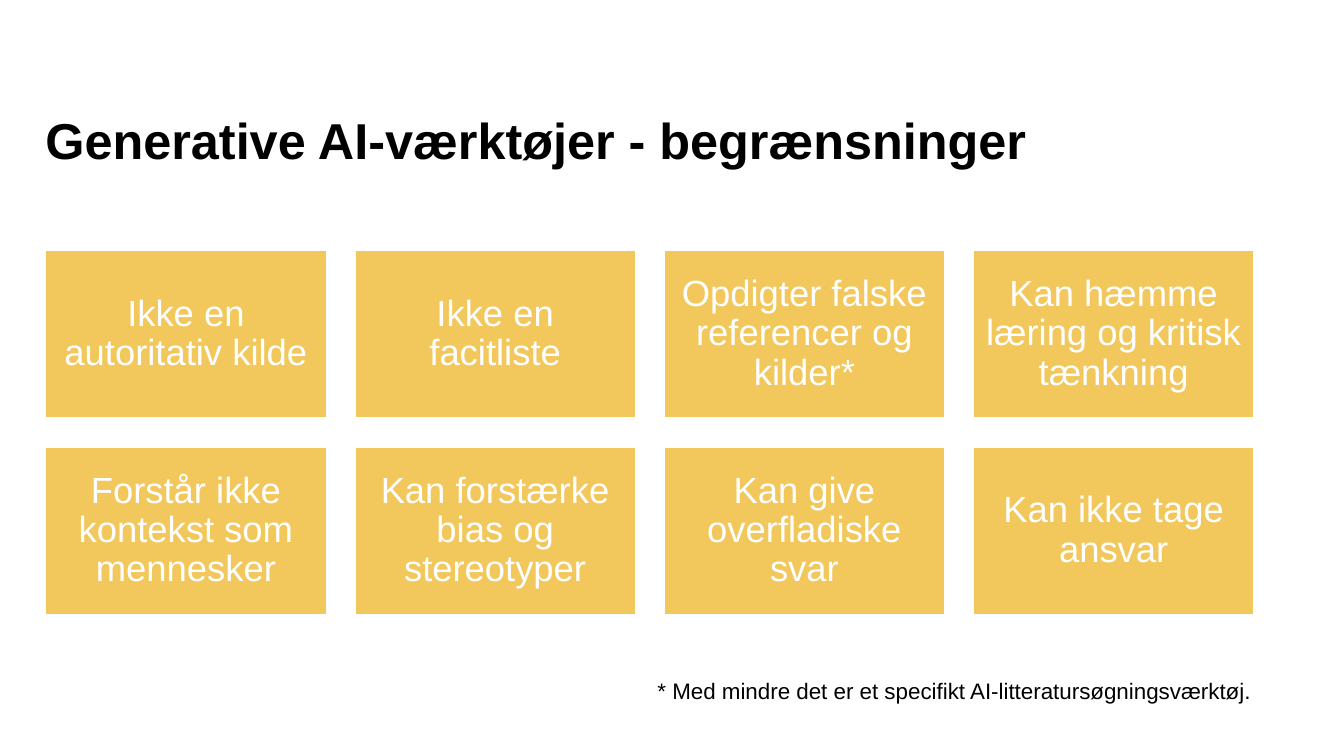
"""Build a slide on the limits of generative AI tools."""
import dataclasses

import pptx
import pptx.dml.color
import pptx.enum.shapes
import pptx.enum.text
import pptx.util

Inches = pptx.util.Inches
Align = pptx.enum.text.PP_ALIGN
Anchor = pptx.enum.text.MSO_ANCHOR


@dataclasses.dataclass(frozen=True)
class Theme:
    """Hold the colours, font and type sizes."""
    font: str = "Arial"
    ink: str = "000000"
    paper: str = "FFFFFF"
    gold: str = "F2C75C"
    head: int = 36
    body: int = 26
    note: int = 16


THEME = Theme()
LIMITS = [
    "Ikke en autoritativ kilde",
    "Ikke en facitliste",
    "Opdigter falske referencer og kilder*",
    "Kan hæmme læring og kritisk tænkning",
    "Forstår ikke kontekst som mennesker",
    "Kan forstærke bias og stereotyper",
    "Kan give overfladiske svar",
    "Kan ikke tage ansvar",
]
COLS = 4
LEFT, TOP = 0.45, 2.48
WIDE, HIGH = 2.79, 1.67
STEP_X, STEP_Y = 3.067, 1.95


def rgb(code):
    """Turn a hex code into a colour."""
    return pptx.dml.color.RGBColor.from_string(code)


def write(shape, text, size, color, bold=False, align=Align.LEFT,
          anchor=Anchor.TOP, inset=0, lines=1.0, wrap=True):
    """Set and format the one paragraph of a shape."""
    frame = shape.text_frame
    frame.text = text
    frame.word_wrap = wrap
    frame.auto_size = pptx.enum.text.MSO_AUTO_SIZE.NONE
    frame.vertical_anchor = anchor
    frame.margin_left = frame.margin_right = Inches(inset)
    frame.margin_top = frame.margin_bottom = Inches(inset)
    para = frame.paragraphs[0]
    para.alignment = align
    para.line_spacing = lines
    font = para.runs[0].font
    font.name = THEME.font
    font.size = pptx.util.Pt(size)
    font.bold = bold
    font.color.rgb = rgb(color)


def add_title(slide, text):
    """Place and fill the title."""
    title = slide.shapes.title
    title.left, title.top = Inches(LEFT), Inches(1.12)
    title.width, title.height = Inches(11.99), Inches(0.73)
    write(title, text, THEME.head, THEME.ink, bold=True, lines=0.97)


def add_card(slide, left, top, text):
    """Draw one gold card with centred text."""
    card = slide.shapes.add_shape(
        pptx.enum.shapes.MSO_SHAPE.RECTANGLE,
        Inches(left), Inches(top), Inches(WIDE), Inches(HIGH))
    card.shadow.inherit = False
    card.fill.solid()
    card.fill.fore_color.rgb = rgb(THEME.gold)
    card.line.color.rgb = rgb(THEME.paper)
    card.line.width = pptx.util.Pt(1.5)
    write(card, text, THEME.body, THEME.paper, align=Align.CENTER,
          anchor=Anchor.MIDDLE, inset=0.11, lines=0.9)


def add_note(slide, text):
    """Add the footnote under the cards."""
    note = slide.shapes.add_textbox(
        Inches(6.52), Inches(6.72), Inches(5.92), Inches(0.27))
    write(note, text, THEME.note, THEME.ink, wrap=False)
    note.text_frame.auto_size = pptx.enum.text.MSO_AUTO_SIZE.SHAPE_TO_FIT_TEXT


def main():
    """Build and save the slide."""
    deck = pptx.Presentation()
    deck.slide_width, deck.slide_height = Inches(13.33), Inches(7.5)
    slide = deck.slides.add_slide(deck.slide_layouts[5])
    add_title(slide, "Generative AI-værktøjer - begrænsninger")
    for index, text in enumerate(LIMITS):
        row, col = divmod(index, COLS)
        add_card(slide, LEFT + col * STEP_X, TOP + row * STEP_Y, text)
    add_note(slide,
             "* Med mindre det er et specifikt AI-litteratursøgningsværktøj.")
    deck.save("out.pptx")


if __name__ == "__main__":
    main()
